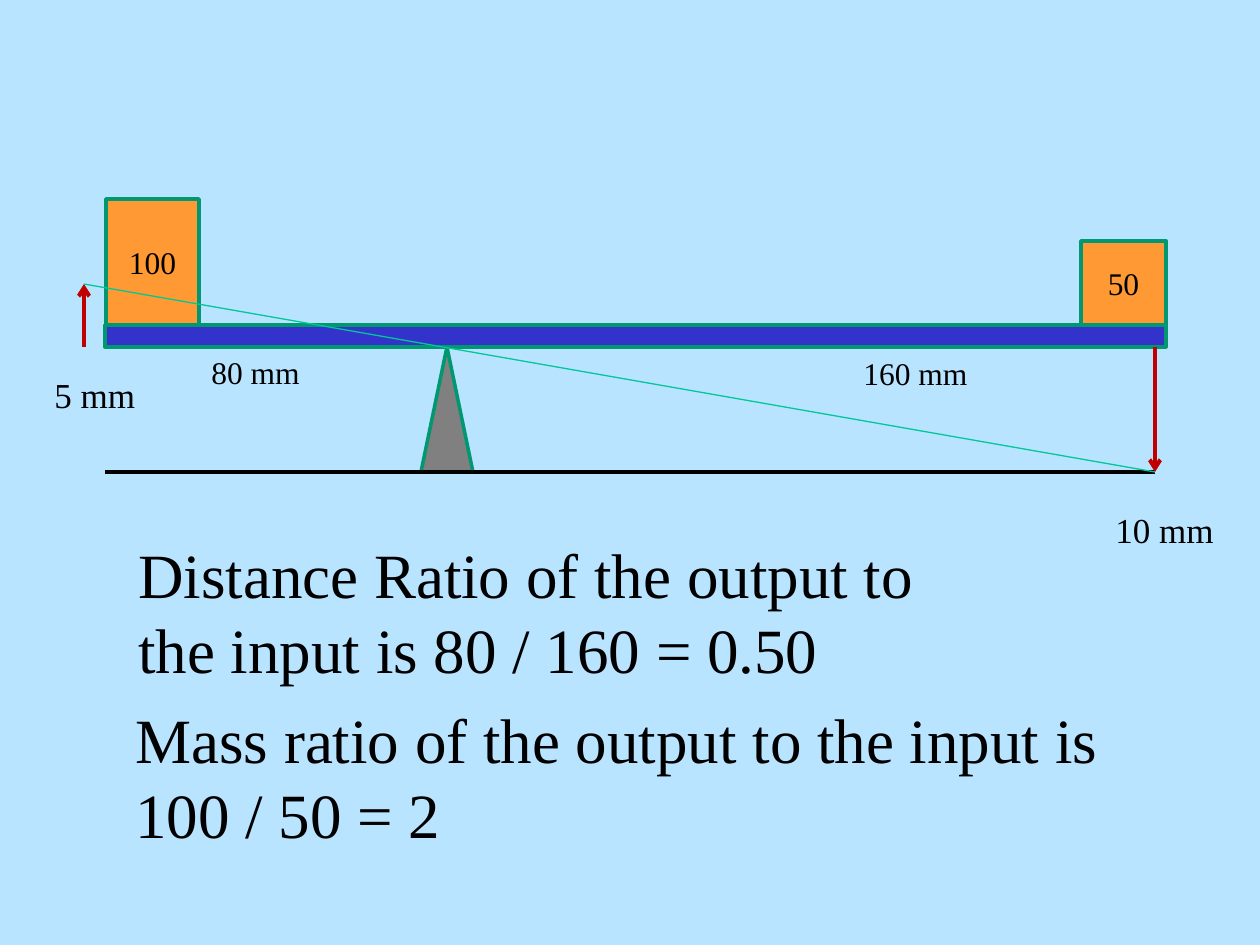
from pptx import Presentation
from pptx.dml.color import RGBColor
from pptx.enum.shapes import MSO_CONNECTOR, MSO_SHAPE
from pptx.enum.text import MSO_ANCHOR, MSO_AUTO_SIZE, PP_ALIGN
from pptx.oxml.ns import qn
from pptx.util import Emu, Pt
from lxml import etree

RECTANGLE = MSO_SHAPE.RECTANGLE
TRIANGLE = MSO_SHAPE.ISOSCELES_TRIANGLE
STRAIGHT = MSO_CONNECTOR.STRAIGHT
MIDDLE = MSO_ANCHOR.MIDDLE
CENTER = PP_ALIGN.CENTER
FIT_SHAPE = MSO_AUTO_SIZE.SHAPE_TO_FIT_TEXT

EMU_PER_PX = 914400 / 126
WIDTH, HEIGHT = 1260, 945
SKY, ORANGE, BLUE, GRAY = "B9E4FF", "FF9933", "3333CC", "808080"
GREEN, MINT, RED, BLACK = "009771", "00C896", "C00000", "000000"


def px(*lengths):
    return [Emu(round(length * EMU_PER_PX)) for length in lengths]


def color(hex_string):
    return RGBColor.from_string(hex_string)


class Drawing:
    font = "Times New Roman"

    def __init__(self, page):
        self.page = page

    def background(self, fill):
        self.page.background.fill.solid()
        self.page.background.fill.fore_color.rgb = color(fill)

    def set_text(self, frame, text, size):
        para = frame.paragraphs[0]
        para.text = text
        for span in para.runs:
            for name, value in {"name": self.font, "size": Pt(size)}.items():
                setattr(span.font, name, value)
            span.font.color.rgb = color(BLACK)
        return para

    def block(self, kind, box, fill, text=""):
        shape = self.page.shapes.add_shape(kind, *px(*box))
        shape.shadow.inherit = False
        shape.fill.solid()
        shape.fill.fore_color.rgb = color(fill)
        shape.line.color.rgb = color(GREEN)
        shape.line.width = Pt(2)
        if text:
            shape.text_frame.vertical_anchor = MIDDLE
            self.set_text(shape.text_frame, text, 18).alignment = CENTER

    def label(self, box, text, size, wrap=True):
        frame = self.page.shapes.add_textbox(*px(*box)).text_frame
        for name, value in {"word_wrap": wrap, "auto_size": FIT_SHAPE}.items():
            setattr(frame, name, value)
        self.set_text(frame, text, size)

    def line(self, start, end, stroke, width, arrow=False):
        connector = self.page.shapes.add_connector(STRAIGHT, *px(*start, *end))
        connector.line.color.rgb = color(stroke)
        connector.line.width = Pt(width)
        properties = connector.element.spPr
        if arrow:
            outline = properties.find(qn("a:ln"))
            etree.SubElement(outline, qn("a:tailEnd"), type="arrow")
        etree.SubElement(properties, qn("a:effectLst"))


def main():
    deck = Presentation()
    deck.slide_width, deck.slide_height = px(WIDTH, HEIGHT)
    drawing = Drawing(deck.slides.add_slide(deck.slide_layouts[6]))
    drawing.background(SKY)

    # Key positions of the lever
    left, right = 105, 1166
    beam_top, beam_bottom, ground = 325, 347, 472
    output_tip, input_tip = (84, 284), (1155, ground)

    # Fulcrum, beam and ground
    drawing.block(TRIANGLE, (421, beam_bottom, 52, ground - beam_bottom), GRAY)
    drawing.block(RECTANGLE, (left, beam_top, right - left, beam_bottom - beam_top), BLUE)
    drawing.line((left, ground), input_tip, BLACK, 2.25)

    # Movement arrows at both ends
    for tip in (output_tip, input_tip):
        drawing.line((tip[0], beam_bottom), tip, RED, 2.25, arrow=True)

    # Distances
    drawing.label((1103, 502, 125, 55), "10 mm", 20, wrap=False)
    drawing.label((42, 367, 107, 55), "5 mm", 20, wrap=False)
    drawing.label((851, 348, 210, 51), "160 mm", 18)
    drawing.label((199, 347, 210, 51), "80 mm", 18)

    # Masses standing on the beam
    for x, width, height, mass in ((right - 85, 85, 84, "50"), (left + 1, 93, 126, "100")):
        drawing.block(RECTANGLE, (x, beam_top - height, width, height), ORANGE, mass)

    # Ratios
    drawing.label((123, 694, 1013, 165),
                  "Mass ratio of the output to the input is \v100 / 50 = 2", 36, wrap=False)
    drawing.label((126, 529, 819, 165),
                  "Distance Ratio of the output to the input is 80 / 160 = 0.50", 36)

    # Tilted position of the beam
    drawing.line(input_tip, output_tip, MINT, 0.75)

    deck.save("out.pptx")


if __name__ == "__main__":
    main()
